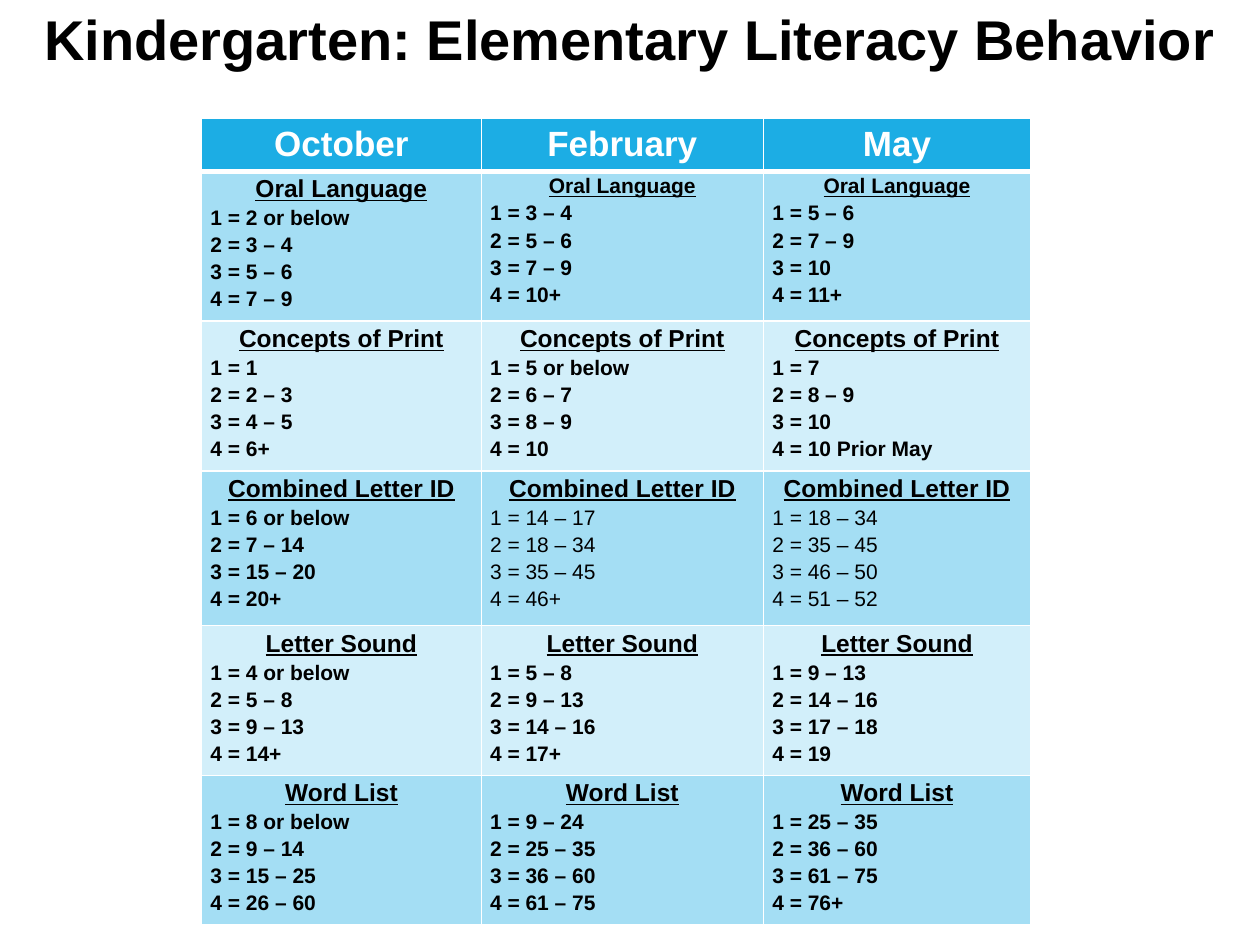
import lxml.etree
import pptx
import pptx.dml.color
import pptx.enum.text
import pptx.oxml.ns
import pptx.util

Inches = pptx.util.Inches
ALIGN = pptx.enum.text.PP_ALIGN
ANCHOR = pptx.enum.text.MSO_ANCHOR

MONTHS = ["October", "February", "May"]
COLUMN_WIDTHS = [2.22, 2.24, 2.12]
ROW_HEIGHTS = [0.42, 1.11, 1.11, 1.23, 1.11, 1.14]
HEADER_FILL = "1CADE4"
BAND_FILLS = ["A4DEF4", "D2EFFA"]

# Skill, then the score ranges for levels 1 to 4 in each month
SKILLS = [
    ("Oral Language", [
        ["2 or below", "3 – 4", "5 – 6", "7 – 9"],
        ["3 – 4", "5 – 6", "7 – 9", "10+"],
        ["5 – 6", "7 – 9", "10", "11+"]]),
    ("Concepts of Print", [
        ["1", "2 – 3", "4 – 5", "6+"],
        ["5 or below", "6 – 7", "8 – 9", "10"],
        ["7", "8 – 9", "10", "10 Prior May"]]),
    ("Combined Letter ID", [
        ["6 or below", "7 – 14", "15 – 20", "20+"],
        ["14 – 17", "18 – 34", "35 – 45", "46+"],
        ["18 – 34", "35 – 45", "46 – 50", "51 – 52"]]),
    ("Letter Sound", [
        ["4 or below", "5 – 8", "9 – 13", "14+"],
        ["5 – 8", "9 – 13", "14 – 16", "17+"],
        ["9 – 13", "14 – 16", "17 – 18", "19"]]),
    ("Word List", [
        ["8 or below", "9 – 14", "15 – 25", "26 – 60"],
        ["9 – 24", "25 – 35", "36 – 60", "61 – 75"],
        ["25 – 35", "36 – 60", "61 – 75", "76+"]]),
]


def color(value):
    return pptx.dml.color.RGBColor.from_string(value)


def write(para, text, size=12, bold=True, underline=False, fill="000000",
          align=ALIGN.LEFT, spacing=1.15):
    para.alignment = align
    para.line_spacing = spacing
    span = para.add_run()
    span.text = text
    span.font.name = "Arial"
    span.font.size = pptx.util.Pt(size)
    span.font.bold = bold
    span.font.underline = underline
    span.font.color.rgb = color(fill)


def set_borders(cell, top=1, bottom=1):
    """Draw white borders; must run before the cell's fill is set."""
    properties = cell._tc.get_or_add_tcPr()
    for side, width in (("L", 1), ("R", 1), ("T", top), ("B", bottom)):
        line = lxml.etree.SubElement(
            properties, pptx.oxml.ns.qn(f"a:ln{side}"), w=str(pptx.util.Pt(width)))
        solid = lxml.etree.SubElement(line, pptx.oxml.ns.qn("a:solidFill"))
        lxml.etree.SubElement(solid, pptx.oxml.ns.qn("a:srgbClr"), val="FFFFFF")


def style_cell(cell, fill, **borders):
    cell.margin_left = cell.margin_right = Inches(0.07)
    cell.margin_top = cell.margin_bottom = 0
    set_borders(cell, **borders)
    cell.fill.solid()
    cell.fill.fore_color.rgb = color(fill)


def fill_skill_cell(cell, skill, ranges, heading_size, bold):
    frame = cell.text_frame
    write(frame.paragraphs[0], skill, size=heading_size, underline=True,
          align=ALIGN.CENTER)
    for level, score in enumerate(ranges, 1):
        write(frame.add_paragraph(), f"{level} = {score}", bold=bold)


def add_title(page, left, top, width, height):
    box = page.shapes.add_textbox(left, top, width, height)
    frame = box.text_frame
    frame.word_wrap = True
    frame.vertical_anchor = ANCHOR.MIDDLE
    frame.margin_left = frame.margin_right = Inches(0.1)
    frame.margin_top = frame.margin_bottom = Inches(0.1)
    write(frame.paragraphs[0], "Kindergarten: Elementary Literacy Behavior",
          size=32, align=ALIGN.CENTER, spacing=0.9)


def add_score_table(page, left, top, width, height):
    table = page.shapes.add_table(
        len(ROW_HEIGHTS), len(MONTHS), left, top, width, height).table
    for column, share in zip(table.columns, COLUMN_WIDTHS):
        column.width = int(width * share / sum(COLUMN_WIDTHS))
    for row, share in zip(table.rows, ROW_HEIGHTS):
        row.height = int(height * share / sum(ROW_HEIGHTS))

    for column, month in enumerate(MONTHS):
        cell = table.cell(0, column)
        style_cell(cell, HEADER_FILL, bottom=3)
        write(cell.text_frame.paragraphs[0], month, size=20, fill="FFFFFF",
              align=ALIGN.CENTER)

    for row, (skill, months) in enumerate(SKILLS, 1):
        for column, ranges in enumerate(months):
            cell = table.cell(row, column)
            style_cell(cell, BAND_FILLS[(row - 1) % 2], top=3 if row == 1 else 1)
            later = column > 0
            fill_skill_cell(
                cell, skill, ranges,
                heading_size=12 if later and skill == "Oral Language" else 14,
                bold=not (later and skill == "Combined Letter ID"))


def main():
    deck = pptx.Presentation()
    deck.slide_width, deck.slide_height = Inches(10), Inches(7.5)
    page = deck.slides.add_slide(deck.slide_layouts[6])
    add_title(page, 0, Inches(-0.08), deck.slide_width, Inches(0.84))
    add_score_table(page, Inches(1.6), Inches(0.94),
                    Inches(sum(COLUMN_WIDTHS)), Inches(sum(ROW_HEIGHTS)))
    deck.save("out.pptx")


if __name__ == "__main__":
    main()
